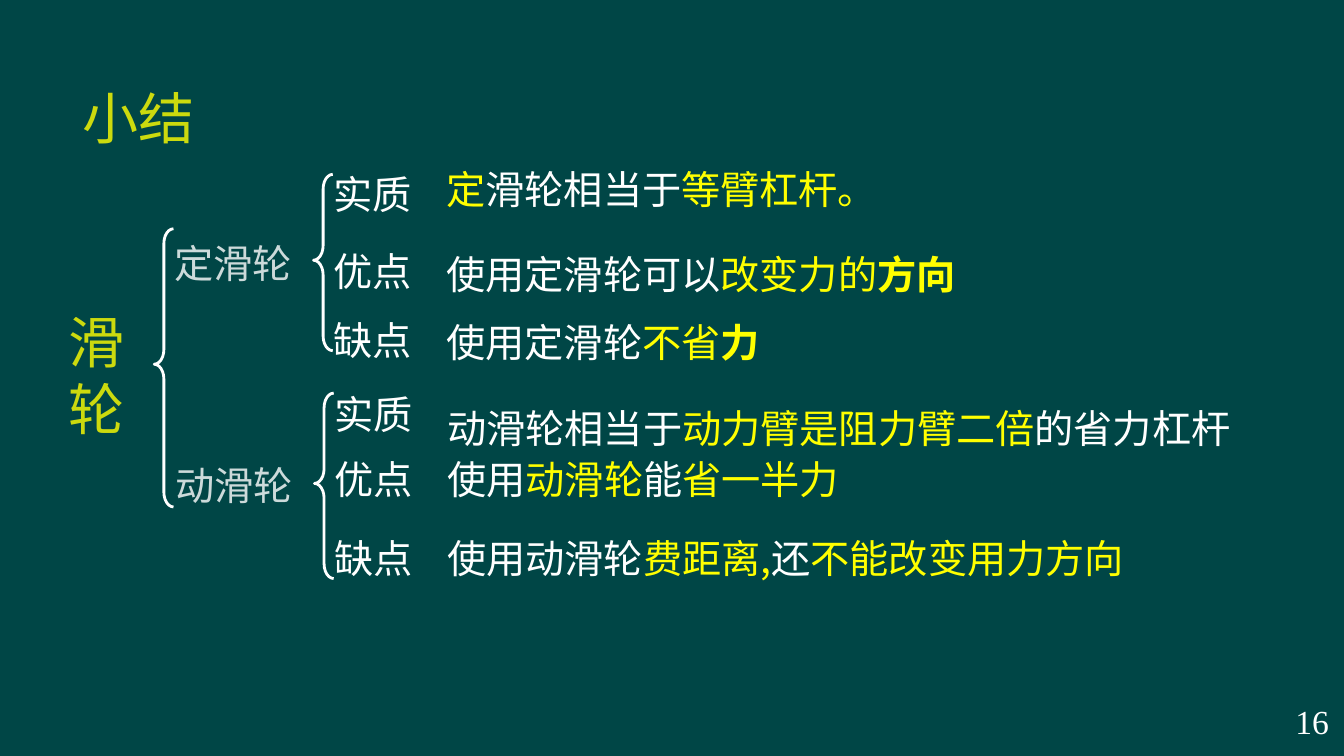
from lxml import etree
from pptx import Presentation
from pptx import util as u
from pptx.dml.color import RGBColor
from pptx.enum import shapes, text
from pptx.oxml import ns

BACKGROUND = RGBColor(0x00, 0x46, 0x46)
WHITE = RGBColor(0xFF, 0xFF, 0xFF)
YELLOW = RGBColor(0xFF, 0xFF, 0x00)
SANS, SERIF = "Noto Sans CJK SC", "Times New Roman"
WIDTH, HEIGHT = u.Inches(13.33), u.Inches(7.5)

# Run formats
PLAIN = dict(color=WHITE)
KEY = dict(color=YELLOW)
STRONG = dict(color=YELLOW, bold=True, name=SERIF)
HEADING = dict(color=YELLOW, size=40, opacity=80)
BRANCH = dict(color=WHITE, opacity=80)
LABEL = dict(color=WHITE, name=SERIF)
NUMBER = dict(color=WHITE, name=SERIF, size=24)

# Columns and line height, in percent of the slide
NAME_SHIFT, LABEL_SHIFT, TEXT_SHIFT = -11.1, 0.75, 9.15
BRACE_WIDTH, LINE = 1.43, 7.6


def place(left, top, width, height):
    """Turn percentages of the slide into lengths."""
    return (round(WIDTH * left / 100), round(HEIGHT * top / 100),
            round(WIDTH * width / 100), round(HEIGHT * height / 100))


def add_span(para, words, color, name=SANS, size=28, bold=False, opacity=100):
    span = para.add_run()
    span.text = words
    for key, value in dict(name=name, size=u.Pt(size), bold=bold).items():
        setattr(span.font, key, value)
    span.font.color.rgb = color
    props = span.font._element
    if opacity < 100:
        tint = props.find(".//" + ns.qn("a:srgbClr"))
        etree.SubElement(tint, ns.qn("a:alpha"), val=str(opacity * 1000))
    # East Asian typeface follows the Latin one
    east = etree.Element(ns.qn("a:ea"), typeface=SANS)
    props.find(ns.qn("a:latin")).addnext(east)


def fill_text(box, spans, wrap=True, spacing=None):
    frame = box.text_frame
    settings = dict(word_wrap=wrap, auto_size=text.MSO_AUTO_SIZE.NONE,
                    vertical_anchor=text.MSO_ANCHOR.TOP)
    for key, value in settings.items():
        setattr(frame, key, value)
    para = frame.paragraphs[0]
    para.alignment = text.PP_ALIGN.LEFT
    para.line_spacing = spacing or 1.0
    for words, style in spans:
        add_span(para, words, **style)


def add_text(page, area, spans, **options):
    fill_text(page.shapes.add_textbox(*place(*area)), spans, **options)


def add_brace(page, left, top, height):
    brace = page.shapes.add_shape(shapes.MSO_SHAPE.LEFT_BRACE,
                                  *place(left, top, BRACE_WIDTH, height))
    brace.shadow.inherit = False
    brace.fill.background()
    brace.line.color.rgb = WHITE
    brace.line.width = u.Pt(2)
    brace.adjustments[0], brace.adjustments[1] = 0.767, 0.513
    brace._element.spPr.xfrm.set("flipV", "1")


def add_title(page, left, top, width, height):
    title = page.shapes.title
    title.left, title.top, title.width, title.height = place(left, top, width, height)
    fill_text(title, [("小结", HEADING)], wrap=False)


def add_root(page, left, top, height):
    """Root topic with the brace that opens to both branches."""
    add_text(page, (left, top + 9.73, 7.13, 19.33), [("滑轮", HEADING)])
    add_brace(page, left + 7.13, top, height)


def add_branch(page, left, top, height, name, name_drop, rows):
    """Branch name, brace and its labelled rows."""
    add_text(page, (left + NAME_SHIFT, top + name_drop, 11.5, LINE), [(name, BRANCH)])
    add_brace(page, left, top, height)
    for label, label_drop, text_drop, width, row_height, spacing, spans in rows:
        add_text(page, (left + LABEL_SHIFT, top + label_drop, 9.45, LINE),
                 [(label, LABEL)])
        add_text(page, (left + TEXT_SHIFT, top + text_drop, width, row_height),
                 spans, spacing=spacing)


# Rows: label, label drop, text drop, text width, text height, line spacing, spans
FIXED_ROWS = [
    ("实质", -1.2, -1.87, 37.73, LINE, None,
     [("定", KEY), ("滑轮相当于", PLAIN), ("等臂杠杆。", KEY)]),
    ("优点", 8.93, 9.33, 41.41, LINE, None,
     [("使用定滑轮可以", PLAIN), ("改变力的", KEY), ("方向", STRONG)]),
    ("缺点", 18.13, 18.4, 27.31, LINE, None,
     [("使用定滑轮", PLAIN), ("不省", KEY), ("力", STRONG)]),
]
MOVING_ROWS = [
    ("实质", -1.07, -2.93, 61.67, 11.33, 1.6,
     [("动滑轮相当于", PLAIN), ("动力臂是阻力臂二倍", KEY), ("的省力杠杆", PLAIN)]),
    ("优点", 7.6, 7.6, 30.98, LINE, None,
     [("使用", PLAIN), ("动滑轮", KEY), ("能", PLAIN), ("省一半力", KEY)]),
    ("缺点", 18, 18, 53.79, LINE, None,
     [("使用动滑轮", PLAIN), ("费距离,", KEY), ("还", PLAIN), ("不能改变用力方向", KEY)]),
]


def main():
    deck = Presentation()
    deck.slide_width, deck.slide_height = WIDTH, HEIGHT
    page = deck.slides.add_slide(deck.slide_layouts[5])
    page.background.fill.solid()
    page.background.fill.fore_color.rgb = BACKGROUND

    add_title(page, 5.4, 10.4, 9.9, 10.27)
    add_root(page, 4.35, 30.27, 36.8)
    add_branch(page, 23.33, 23.07, 23.33, "定滑轮", 7.87, FIXED_ROWS)
    add_branch(page, 23.4, 52, 24.53, "动滑轮", 8.4, MOVING_ROWS)
    # Slide number
    add_text(page, (95.65, 92, 4.43, 6.67), [("16", NUMBER)])
    deck.save("out.pptx")


if __name__ == "__main__":
    main()
